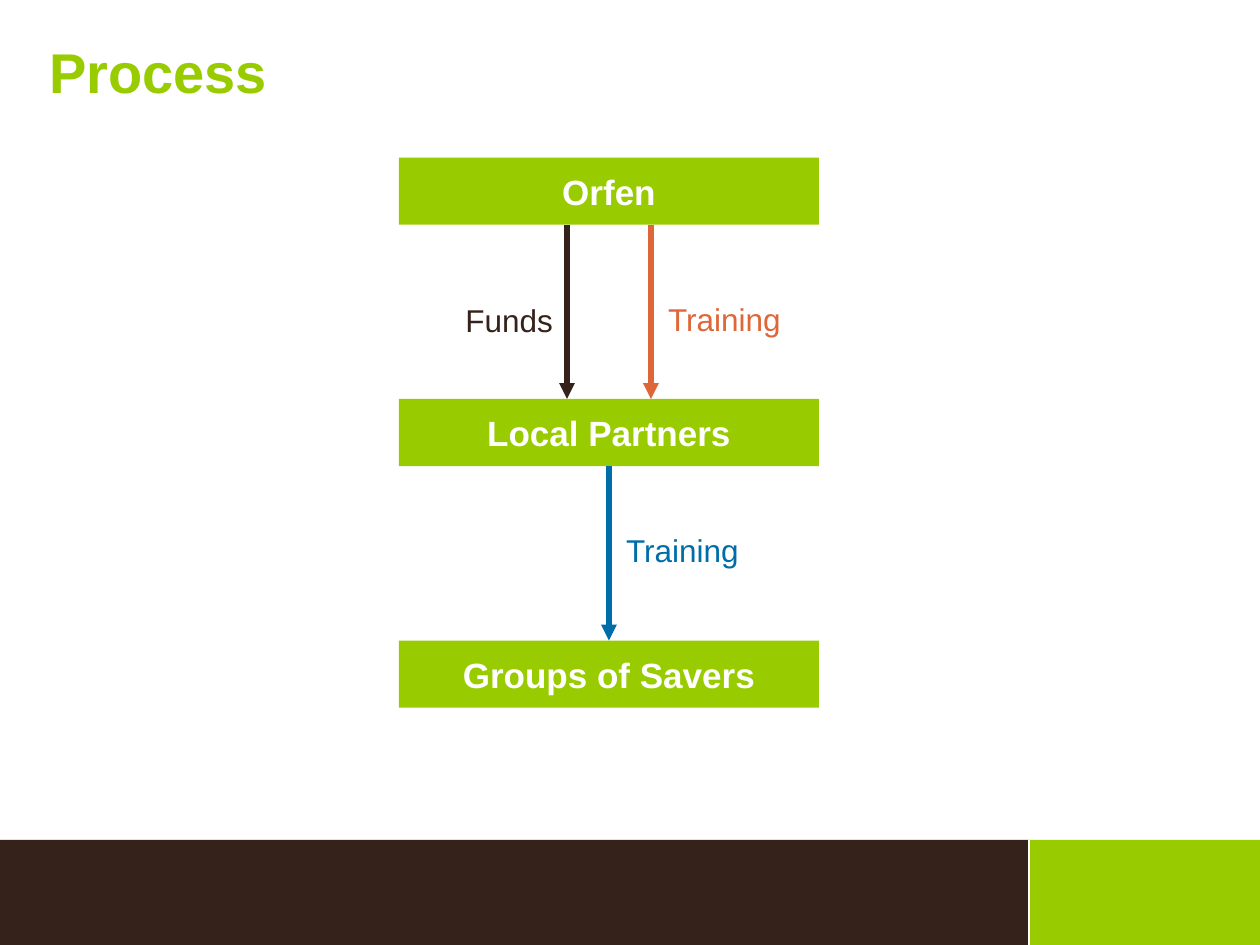
from dataclasses import dataclass

import pptx
import pptx.dml.color
import pptx.enum.shapes
import pptx.enum.text
import pptx.oxml
import pptx.oxml.ns
import pptx.presentation
import pptx.shapes.autoshape
import pptx.shapes.connector
import pptx.slide
import pptx.util

Pt = pptx.util.Pt
RGBColor = pptx.dml.color.RGBColor
Align = pptx.enum.text.PP_ALIGN

GREEN = RGBColor(0x99, 0xCC, 0x00)
BROWN = RGBColor(0x35, 0x23, 0x1B)
ORANGE = RGBColor(0xDE, 0x66, 0x39)
BLUE = RGBColor(0x00, 0x6D, 0xAB)
WHITE = RGBColor(0xFF, 0xFF, 0xFF)

SLIDE_WIDTH, SLIDE_HEIGHT = 720, 540
CENTER = 348
BOX_WIDTH, BOX_HEIGHT = 240, 38.4
BOX_TOP, BOX_PITCH = 90, 138
ARROW_OFFSET = 24
FOOTER_TOP, FOOTER_SPLIT = 480, 588
PARTIES = ("Orfen", "Local Partners", "Groups of Savers")


@dataclass(frozen=True)
class Flow:
    label: str
    color: RGBColor
    source: int
    offset: float
    label_left: float
    label_top: float
    label_width: float


FLOWS = (
    Flow("Training", BLUE, 1, 0, 336, 300, 108),
    Flow("Training", ORANGE, 0, ARROW_OFFSET, 360, 168, 108),
    Flow("Funds", BROWN, 0, -ARROW_OFFSET, 252, 168.5, 78),
)


def write_text(shape: pptx.shapes.autoshape.Shape, text: str, *, size: float,
               color: RGBColor, bold: bool = False, align: Align = Align.CENTER,
               margin: float = 3.6) -> None:
    frame = shape.text_frame
    frame.word_wrap = True
    frame.vertical_anchor = pptx.enum.text.MSO_ANCHOR.TOP
    frame.margin_top = frame.margin_bottom = Pt(margin)
    paragraph = frame.paragraphs[0]
    paragraph.text = text
    paragraph.alignment = align
    font = paragraph.font
    font.name = "Arial"
    font.size = Pt(size)
    font.bold = bold
    font.color.rgb = color


def add_label(slide: pptx.slide.Slide, text: str, left: float, top: float,
              width: float, height: float, **text_format) -> None:
    shape = slide.shapes.add_textbox(Pt(left), Pt(top), Pt(width), Pt(height))
    write_text(shape, text, **text_format)


def add_rectangle(slide: pptx.slide.Slide, left: float, top: float, width: float,
                  height: float, color: RGBColor) -> pptx.shapes.autoshape.Shape:
    shape = slide.shapes.add_shape(pptx.enum.shapes.MSO_SHAPE.RECTANGLE,
                                   Pt(left), Pt(top), Pt(width), Pt(height))
    shape.shadow.inherit = False
    shape.fill.solid()
    shape.fill.fore_color.rgb = color
    shape.line.fill.background()
    return shape


def add_vertical_line(slide: pptx.slide.Slide, x: float, top: float, bottom: float,
                      color: RGBColor, width: float,
                      arrow: bool = False) -> pptx.shapes.connector.Connector:
    connector = slide.shapes.add_connector(pptx.enum.shapes.MSO_CONNECTOR.STRAIGHT,
                                           Pt(x), Pt(top), Pt(x), Pt(bottom))
    connector.line.color.rgb = color
    connector.line.width = Pt(width)
    if arrow:
        head = pptx.oxml.parse_xml(
            f'<a:tailEnd {pptx.oxml.ns.nsdecls("a")} type="triangle"/>')
        connector.line._get_or_add_ln().append(head)
    effects = pptx.oxml.parse_xml(f'<a:effectLst {pptx.oxml.ns.nsdecls("a")}/>')
    connector._element.spPr.append(effects)
    return connector


def add_footer(slide: pptx.slide.Slide) -> None:
    height = SLIDE_HEIGHT - FOOTER_TOP
    add_rectangle(slide, FOOTER_SPLIT, FOOTER_TOP, SLIDE_WIDTH - FOOTER_SPLIT, height, GREEN)
    add_rectangle(slide, 0, FOOTER_TOP, FOOTER_SPLIT, height, BROWN)
    add_vertical_line(slide, FOOTER_SPLIT, FOOTER_TOP, SLIDE_HEIGHT, WHITE, 1.5)


def add_party(slide: pptx.slide.Slide, index: int,
              name: str) -> pptx.shapes.autoshape.Shape:
    shape = add_rectangle(slide, CENTER - BOX_WIDTH / 2, BOX_TOP + index * BOX_PITCH,
                          BOX_WIDTH, BOX_HEIGHT, GREEN)
    write_text(shape, name, size=20, color=WHITE, bold=True, margin=7.2)
    return shape


def add_flow(slide: pptx.slide.Slide, flow: Flow,
             parties: list[pptx.shapes.autoshape.Shape]) -> None:
    top = BOX_TOP + flow.source * BOX_PITCH
    connector = add_vertical_line(slide, CENTER + flow.offset, top + BOX_HEIGHT,
                                  top + BOX_PITCH, flow.color, 3, arrow=True)
    if flow.offset == 0:
        connector.begin_connect(parties[flow.source], 2)
        connector.end_connect(parties[flow.source + 1], 0)
    add_label(slide, flow.label, flow.label_left, flow.label_top, flow.label_width, 28.8,
              size=18, color=flow.color)


def main() -> None:
    presentation = pptx.Presentation()
    presentation.slide_width = Pt(SLIDE_WIDTH)
    presentation.slide_height = Pt(SLIDE_HEIGHT)
    slide = presentation.slides.add_slide(presentation.slide_layouts[6])
    add_footer(slide)
    add_label(slide, "Process", 21, 18, 621, 45,
              size=32, color=GREEN, bold=True, align=Align.LEFT)
    parties = [add_party(slide, index, name) for index, name in enumerate(PARTIES)]
    for flow in FLOWS:
        add_flow(slide, flow, parties)
    presentation.save("out.pptx")


if __name__ == "__main__":
    main()
